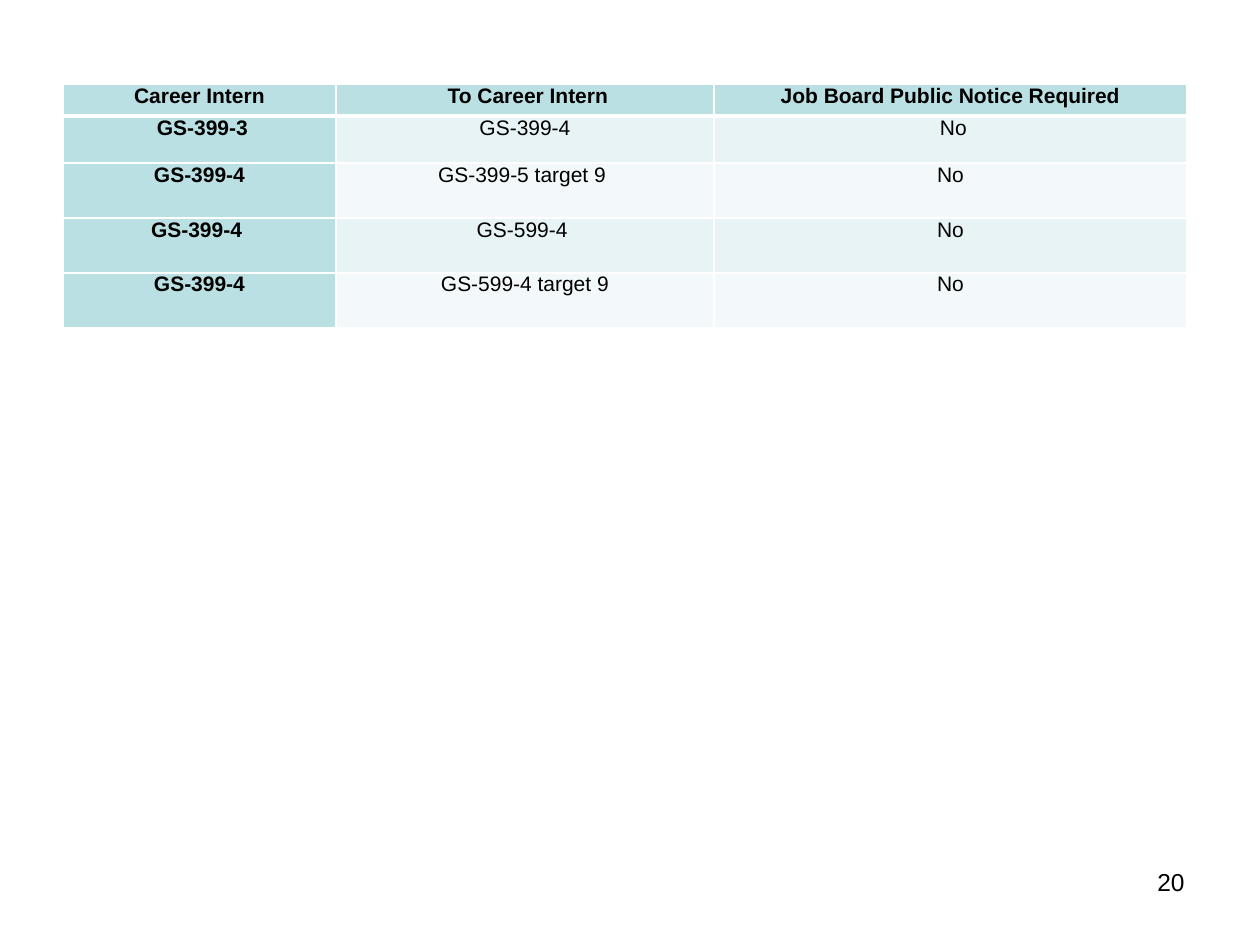
from dataclasses import dataclass

from lxml.etree import SubElement
from pptx import Presentation
from pptx.dml.color import RGBColor
from pptx.enum.text import PP_ALIGN
from pptx.oxml.ns import qn
from pptx.slide import Slide
from pptx.table import _Cell
from pptx.util import Emu, Pt

EMU_PER_PX = 914400 / 126
HEADER_FILL = "BBE0E3"
BAND_FILLS = ("E7F3F4", "F3F9FA")
WHITE = "FFFFFF"
BLACK = "000000"
COLUMN_WIDTHS = (273, 378, 473)
ROW_HEIGHTS = (32, 47, 55, 55, 55)


@dataclass(frozen=True)
class Promotion:
    current: str
    target: str
    notice: str


HEADINGS = Promotion("Career Intern", " To Career Intern", "Job Board Public Notice Required")
PROMOTIONS = (
    Promotion(" GS-399-3", "GS-399-4", " No"),
    Promotion("GS-399-4", "GS-399-5 target 9 ", "No"),
    Promotion("GS-399-4 ", "GS-599-4 ", "No"),
    Promotion("GS-399-4", "GS-599-4 target 9", "No"),
)


def px(length: int) -> Emu:
    return Emu(round(length * EMU_PER_PX))


def color(value: str) -> RGBColor:
    return RGBColor.from_string(value)


def write_text(frame, text: str, size: int, align: PP_ALIGN, bold: bool = False) -> None:
    paragraph = frame.paragraphs[0]
    paragraph.alignment = align
    span = paragraph.add_run()
    span.text = text
    for name, value in {"name": "Arial", "size": Pt(size), "bold": bold}.items():
        setattr(span.font, name, value)
    span.font.color.rgb = color(BLACK)


def add_borders(cell: _Cell, widths: dict[str, int]) -> None:
    properties = cell._tc.get_or_add_tcPr()
    for side, width in widths.items():
        line = SubElement(properties, qn(f"a:ln{side}"), w=str(Pt(width)))
        fill = SubElement(line, qn("a:solidFill"))
        SubElement(fill, qn("a:srgbClr"), val=WHITE)


def format_cell(cell: _Cell, text: str, row: int, column: int) -> None:
    is_heading = row == 0 or column == 0
    margins = {"margin_left": px(9), "margin_right": px(9), "margin_top": 0, "margin_bottom": 0}
    for name, value in margins.items():
        setattr(cell, name, value)
    add_borders(cell, {"L": 1, "R": 1, "T": 3 if row == 1 else 1, "B": 3 if row == 0 else 1})
    cell.fill.solid()
    cell.fill.fore_color.rgb = color(HEADER_FILL if is_heading else BAND_FILLS[(row - 1) % 2])
    write_text(cell.text_frame, text, 12, PP_ALIGN.CENTER, is_heading)


def add_promotion_table(page: Slide) -> None:
    table = page.shapes.add_table(
        len(ROW_HEIGHTS), len(COLUMN_WIDTHS), px(63), px(84),
        px(sum(COLUMN_WIDTHS)), px(sum(ROW_HEIGHTS)),
    ).table
    for column, width in zip(table.columns, COLUMN_WIDTHS):
        column.width = px(width)
    for row, height in zip(table.rows, ROW_HEIGHTS):
        row.height = px(height)
    for row, entry in enumerate((HEADINGS, *PROMOTIONS)):
        for column, text in enumerate((entry.current, entry.target, entry.notice)):
            format_cell(table.cell(row, column), text, row, column)


def add_page_number(page: Slide, number: str) -> None:
    box = page.shapes.add_textbox(px(903), px(861), px(294), px(66))
    box.text_frame.word_wrap = True
    write_text(box.text_frame, number, 14, PP_ALIGN.RIGHT)


def main() -> None:
    deck = Presentation()
    deck.slide_width, deck.slide_height = px(1260), px(945)
    page = deck.slides.add_slide(deck.slide_layouts[6])
    add_page_number(page, "20")
    add_promotion_table(page)
    deck.save("out.pptx")


if __name__ == "__main__":
    main()
